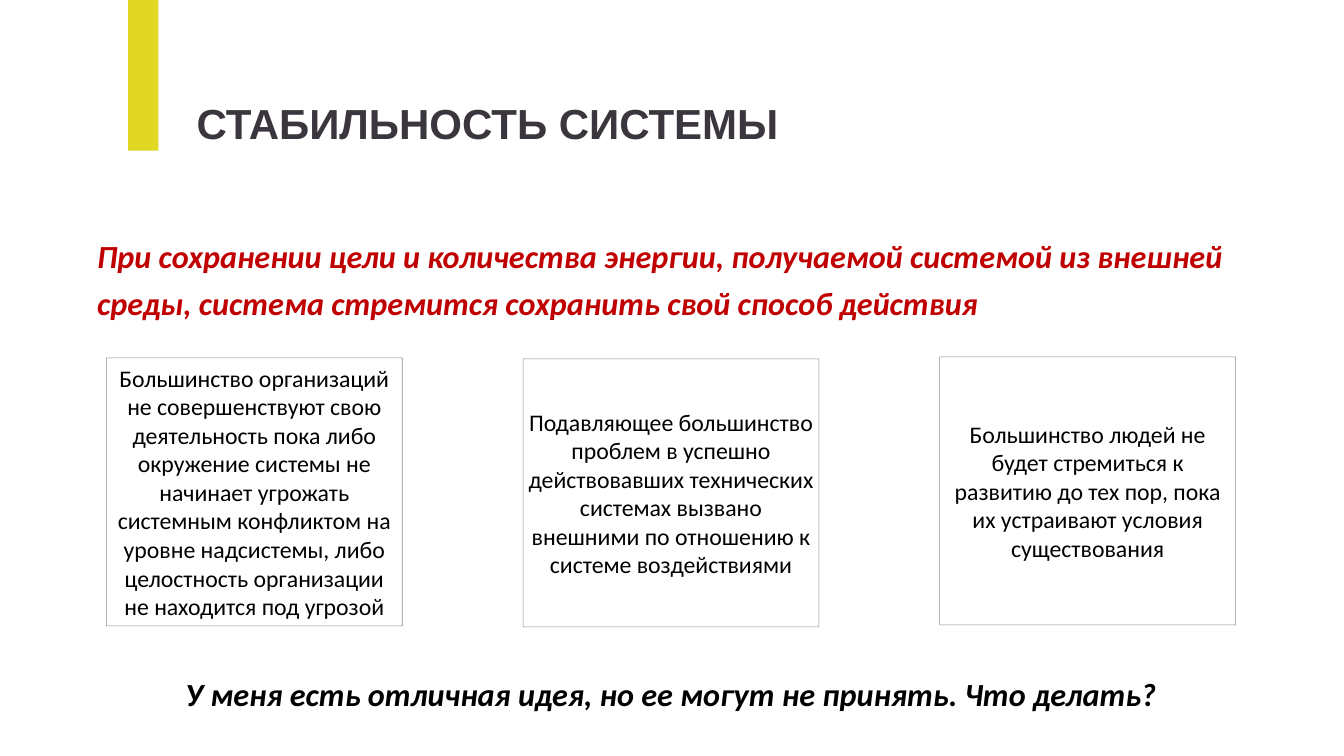
"""Builds the slide about the stability of a system."""
import dataclasses

import lxml.etree
import pptx
import pptx.dml.color
import pptx.enum.shapes
import pptx.enum.text
import pptx.oxml.ns
import pptx.shapes.autoshape
import pptx.slide
import pptx.text.text
import pptx.util

Inches = pptx.util.Inches
Align = pptx.enum.text.PP_ALIGN

COLOURS = {
    "accent": "E0D825",
    "title": "3B363D",
    "principle": "C00000",
    "text": "000000",
    "border": "2C282D",
}
CARD_LEFT, CARD_PITCH = 2.11, 8.265
CARD_WIDTH, CARD_HEIGHT = 5.87, 5.32
BORDER_OPACITY = 55


@dataclasses.dataclass(frozen=True)
class Style:
    size: float
    colour: str
    font: str = "Calibri"
    bold: bool = False
    italic: bool = False
    align: Align = Align.LEFT
    line_spacing: float | None = None


@dataclasses.dataclass(frozen=True)
class Label:
    text: str
    left: float
    top: float
    width: float
    height: float
    style: Style
    wrap: bool = True


@dataclasses.dataclass(frozen=True)
class Card:
    text: str
    top: float


TITLE = Style(60, "title", font="Arial", bold=True)
PRINCIPLE = Style(46, "principle", bold=True, italic=True, line_spacing=67)
QUESTION = dataclasses.replace(PRINCIPLE, colour="text", align=Align.CENTER)
CARD = Style(34, "text", align=Align.CENTER)

LABELS = [
    Label("СТАБИЛЬНОСТЬ СИСТЕМЫ", 3.8, 1.88, 11.86, 1.11, TITLE, wrap=False),
    Label(
        "При сохранении цели и количества энергии, получаемой системой из внешней "
        "среды, система стремится сохранить свой способ действия",
        1.83, 4.47, 24.43, 1.92, PRINCIPLE,
    ),
    Label(
        "У меня есть отличная идея, но ее могут не принять. Что делать?",
        1.09, 13.16, 24.43, 0.98, QUESTION,
    ),
]
CARDS = [
    Card(
        "Большинство организаций не совершенствуют свою деятельность пока либо "
        "окружение системы не начинает угрожать системным конфликтом на уровне "
        "надсистемы, либо целостность организации не находится под угрозой",
        7.1,
    ),
    Card(
        "Подавляющее большинство проблем в успешно действовавших технических "
        "системах вызвано внешними по отношению к системе воздействиями",
        7.12,
    ),
    Card(
        "Большинство людей не будет стремиться к развитию до тех пор, пока их "
        "устраивают условия существования",
        7.08,
    ),
]


def colour(name: str) -> pptx.dml.color.RGBColor:
    return pptx.dml.color.RGBColor.from_string(COLOURS[name])


def write_text(text_frame: pptx.text.text.TextFrame, text: str, style: Style) -> None:
    text_frame.text = text
    paragraph = text_frame.paragraphs[0]
    paragraph.alignment = style.align
    if style.line_spacing:
        paragraph.line_spacing = pptx.util.Pt(style.line_spacing)
    font = paragraph.runs[0].font
    font.name = style.font
    font.size = pptx.util.Pt(style.size)
    font.bold = style.bold
    font.italic = style.italic
    font.color.rgb = colour(style.colour)


def add_rectangle(
    slide: pptx.slide.Slide, left: float, top: float, width: float, height: float
) -> pptx.shapes.autoshape.Shape:
    shape = slide.shapes.add_shape(
        pptx.enum.shapes.MSO_SHAPE.RECTANGLE,
        Inches(left), Inches(top), Inches(width), Inches(height),
    )
    shape.shadow.inherit = False
    return shape


def add_accent_bar(slide: pptx.slide.Slide) -> None:
    shape = add_rectangle(slide, 2.54, 0, 0.6, 2.99)
    shape.fill.solid()
    shape.fill.fore_color.rgb = colour("accent")
    shape.line.fill.background()


def add_label(slide: pptx.slide.Slide, label: Label) -> None:
    shape = slide.shapes.add_textbox(
        Inches(label.left), Inches(label.top), Inches(label.width), Inches(label.height)
    )
    shape.text_frame.word_wrap = label.wrap
    shape.text_frame.auto_size = pptx.enum.text.MSO_AUTO_SIZE.SHAPE_TO_FIT_TEXT
    write_text(shape.text_frame, label.text, label.style)


def add_card(slide: pptx.slide.Slide, card: Card, column: int) -> None:
    left = CARD_LEFT + column * CARD_PITCH
    shape = add_rectangle(slide, left, card.top, CARD_WIDTH, CARD_HEIGHT)
    shape.fill.background()
    shape.line.width = pptx.util.Pt(0)
    shape.line.color.rgb = colour("border")
    border = shape.line._ln.find(".//" + pptx.oxml.ns.qn("a:srgbClr"))
    alpha = lxml.etree.SubElement(border, pptx.oxml.ns.qn("a:alpha"))
    alpha.set("val", str(BORDER_OPACITY * 1000))
    shape.text_frame.word_wrap = True
    shape.text_frame.vertical_anchor = pptx.enum.text.MSO_ANCHOR.MIDDLE
    write_text(shape.text_frame, card.text, CARD)


def main() -> None:
    presentation = pptx.Presentation()
    presentation.slide_width = Inches(26.66)
    presentation.slide_height = Inches(15)
    slide = presentation.slides.add_slide(presentation.slide_layouts[6])
    add_accent_bar(slide)
    for label in LABELS:
        add_label(slide, label)
    for column, card in enumerate(CARDS):
        add_card(slide, card, column)
    presentation.save("out.pptx")


if __name__ == "__main__":
    main()
